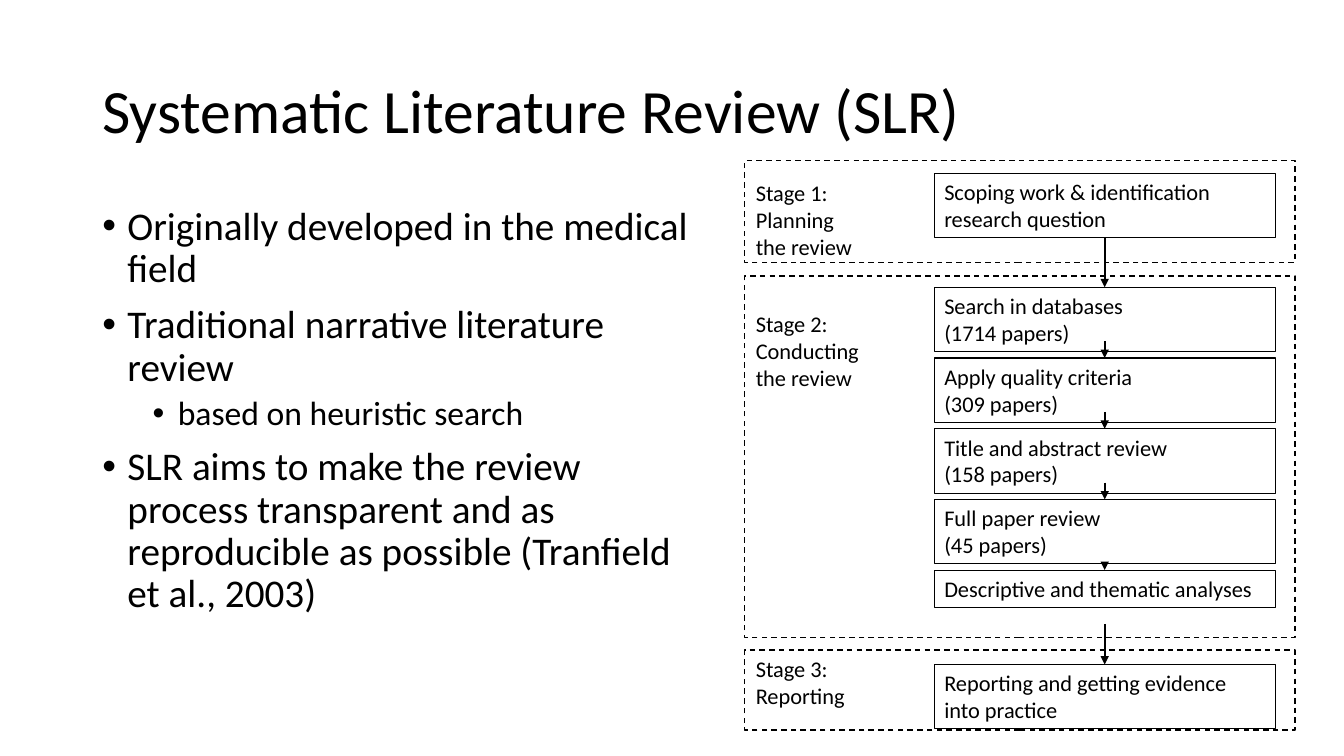
from lxml.etree import SubElement
from pptx import Presentation
from pptx.dml.color import RGBColor
from pptx.enum.dml import MSO_LINE
from pptx.enum.shapes import MSO_CONNECTOR, MSO_SHAPE
from pptx.enum.text import MSO_ANCHOR, PP_ALIGN
from pptx.oxml.ns import qn
from pptx.util import Pt

TITLE = "Systematic Literature Review (SLR)"
# level, text
POINTS = [
    (0, "Originally developed in the medical field"),
    (0, "Traditional narrative literature review"),
    (1, "based on heuristic search"),
    (0, "SLR aims to make the review process transparent and as "
        "reproducible as possible (Tranfield et al., 2003)"),
]
# level: size, space before, left margin
LEVELS = {0: (28, 10, 18), 1: (24, 5, 54)}
# frame top, frame height, label top, label height, label
STAGES = [
    (114.5, 73, 124.5, 65.5, "Stage 1: \nPlanning \nthe review"),
    (197.2, 258, 218, 65.5, "Stage 2: \nConducting \nthe review"),
    (464.4, 57, 464.4, 46, "Stage 3: \nReporting"),
]
SEARCH_TOP, STEP = 205.2, 50.5
TALL, LOW = 46, 26.6
# top, height, length of the arrow leading in, text
STEPS = [
    (123.8, TALL, 0, "Scoping work & identification research question"),
    *[(SEARCH_TOP + i * STEP, high, arrow, text)
      for i, (high, arrow, text) in enumerate([
          (TALL, 35.3, "Search in databases \n(1714 papers)"),
          (TALL, 12, "Apply quality criteria\n(309 papers)"),
          (TALL, 12, "Title and abstract review \n(158 papers)"),
          (TALL, 12, "Full paper review\n(45 papers)"),
          (LOW, 5, "Descriptive and thematic analyses"),
      ])],
    (474.6, TALL, 29, "Reporting and getting evidence into practice"),
]
FRAME_X, FRAME_W = 532, 393
LABEL_X, LABEL_W = 532.8, 119.5
STEP_X, STEP_W = 667.4, 243.4
BLACK = "000000"


def color(part, value):
    part.rgb = RGBColor.from_string(value)


def write(para, text, size=16, before=0, spacing=None, bullet=None):
    """Fill a paragraph; bullet is the left margin of its bulleted text."""
    if bullet is not None:
        props = para._p.get_or_add_pPr()
        props.set("marL", str(Pt(bullet)))
        props.set("indent", str(-Pt(18)))
        SubElement(props, qn("a:buFont")).set("typeface", "Arial")
        SubElement(props, qn("a:buChar")).set("char", "•")
    para.text = text
    para.alignment = PP_ALIGN.LEFT
    if before:
        para.space_before = Pt(before)
    if spacing:
        para.line_spacing = spacing
    for run in para.runs:
        run.font.size = Pt(size)
        run.font.name = "Calibri"
        color(run.font.color, BLACK)
    for stop in para._p.findall(qn("a:br")):
        SubElement(stop, qn("a:rPr")).set("sz", str(size * 100))


def frame(slide, x, y, wide, high, anchor=MSO_ANCHOR.TOP):
    """Add a wrapping text box and return its text frame."""
    body = slide.shapes.add_textbox(Pt(x), Pt(y), Pt(wide), Pt(high)).text_frame
    body.word_wrap = True
    body.vertical_anchor = anchor
    return body


def box(slide, x, y, wide, high, weight):
    shape = slide.shapes.add_shape(
        MSO_SHAPE.RECTANGLE, Pt(x), Pt(y), Pt(wide), Pt(high))
    shape.shadow.inherit = False
    shape.fill.background()
    color(shape.line.color, BLACK)
    shape.line.width = Pt(weight)
    return shape


def arrow(slide, x, start, end):
    link = slide.shapes.add_connector(
        MSO_CONNECTOR.STRAIGHT, Pt(x), Pt(start), Pt(x), Pt(end))
    color(link.line.color, BLACK)
    link.line.width = Pt(1.5)
    SubElement(link.line._get_or_add_ln(), qn("a:tailEnd")).set("type", "triangle")
    SubElement(link._element.spPr, qn("a:effectLst"))


def main():
    deck = Presentation()
    deck.slide_width, deck.slide_height = Pt(960), Pt(540)
    slide = deck.slides.add_slide(deck.slide_layouts[6])

    title = frame(slide, 66, 28.75, 828, 104.4, MSO_ANCHOR.MIDDLE)
    write(title.paragraphs[0], TITLE, size=44, spacing=0.9)

    body = frame(slide, 66, 143.75, 440, 342.6)
    for i, (level, text) in enumerate(POINTS):
        size, before, margin = LEVELS[level]
        para = body.add_paragraph() if i else body.paragraphs[0]
        para.level = level
        write(para, text, size=size, before=before if i else 0,
              spacing=0.9, bullet=margin)

    for top, high, _, text in STEPS:
        body = box(slide, STEP_X, top, STEP_W, high, 0.75).text_frame
        body.word_wrap = True
        body.vertical_anchor = MSO_ANCHOR.TOP
        write(body.paragraphs[0], text)

    for top, high, label_top, label_high, text in STAGES:
        box(slide, FRAME_X, top, FRAME_W, high, 1).line.dash_style = MSO_LINE.DASH
        label = frame(slide, LABEL_X, label_top, LABEL_W, label_high)
        write(label.paragraphs[0], text)

    for top, _, length, _ in STEPS:
        if length:
            arrow(slide, STEP_X + STEP_W / 2, top - length, top)

    deck.save("out.pptx")


if __name__ == "__main__":
    main()
